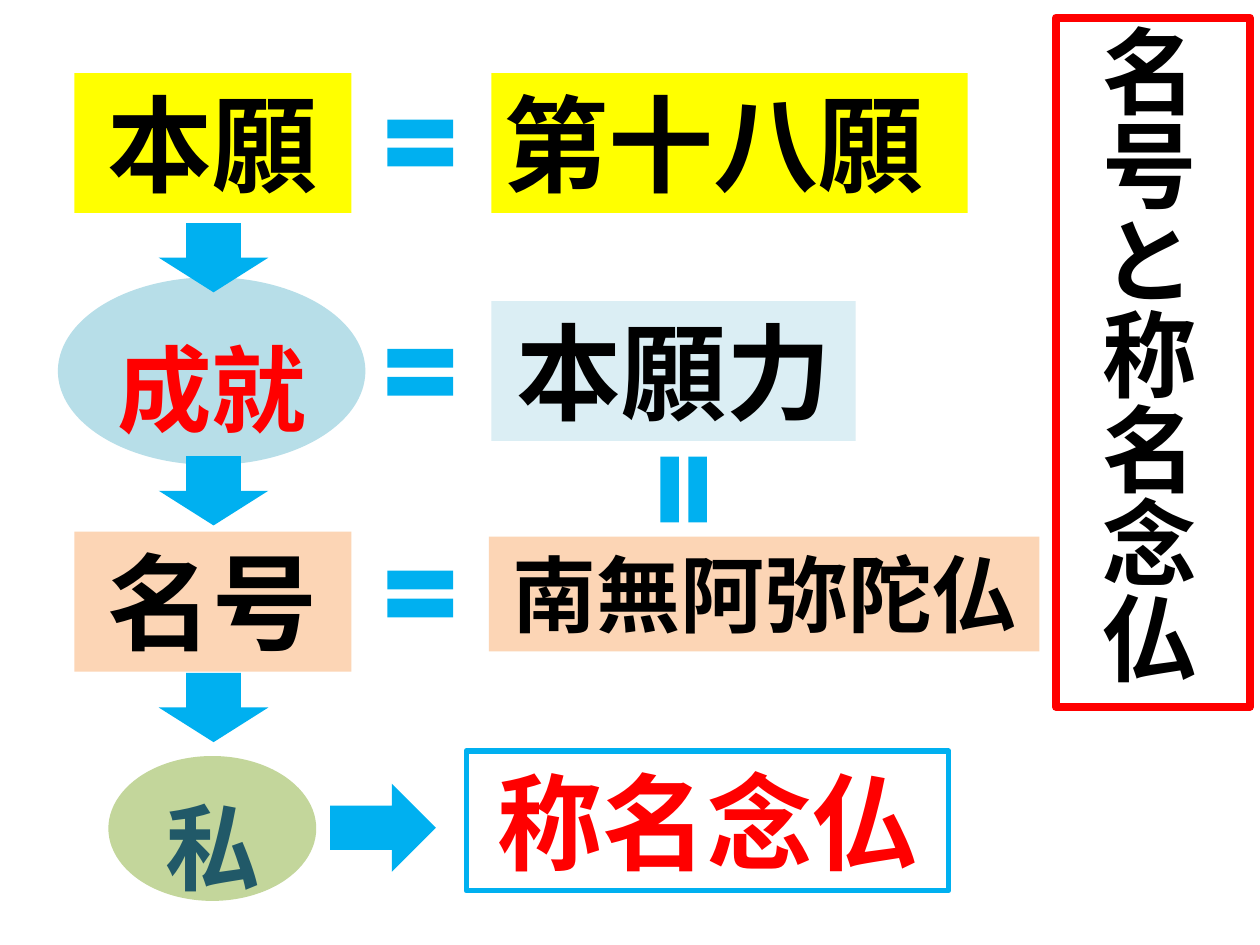
from pptx import Presentation
from pptx.dml.color import RGBColor
from pptx.enum.shapes import MSO_SHAPE
from pptx.enum.text import MSO_ANCHOR, MSO_AUTO_SIZE, PP_ALIGN
from pptx.util import Inches, Pt

RECTANGLE = MSO_SHAPE.RECTANGLE
OVAL = MSO_SHAPE.OVAL
ARROW = MSO_SHAPE.RIGHT_ARROW
EQUAL = MSO_SHAPE.MATH_EQUAL
CENTER = PP_ALIGN.CENTER
LEFT = PP_ALIGN.LEFT
TOP = MSO_ANCHOR.TOP
MIDDLE = MSO_ANCHOR.MIDDLE
NO_AUTOSIZE = MSO_AUTO_SIZE.NONE

FONT = "Noto Sans CJK JP"
BLACK, RED, BLUE = "000000", "FF0000", "00B0F0"
YELLOW, PEACH = "FFFF00", "FCD5B5"
TITLE_ONLY = 5


def color(hex_string):
    """Turn a hex string into a colour."""
    return RGBColor.from_string(hex_string)


def add_figure(slide, kind, box, fill=None, line=None, rotation=0):
    """Add a flat preset shape in the box, with optional fill and outline."""
    shape = slide.shapes.add_shape(kind, *map(Inches, box))
    shape.shadow.inherit = False
    shape.rotation = rotation
    if fill:
        shape.fill.solid()
        shape.fill.fore_color.rgb = color(fill)
    else:
        shape.fill.background()
    if line:
        set_outline(shape, line, 3)
    else:
        shape.line.fill.background()
    return shape


def set_outline(shape, hex_string, width):
    """Outline the shape."""
    shape.line.color.rgb = color(hex_string)
    shape.line.width = Pt(width)


def write(shape, text, size, hex_string=BLACK, font=FONT, align=CENTER, anchor=TOP, spacing=None):
    """Write one bold paragraph in the shape."""
    frame = shape.text_frame
    frame.word_wrap = True
    frame.auto_size = NO_AUTOSIZE
    frame.vertical_anchor = anchor
    paragraph = frame.paragraphs[0]
    paragraph.alignment = align
    if spacing:
        paragraph.line_spacing = spacing
    run = paragraph.add_run()
    run.text = text
    run.font.name = font
    run.font.size = Pt(size)
    run.font.bold = True
    run.font.color.rgb = color(hex_string)


def add_title(slide, box):
    """Set the title vertically in a red frame."""
    title = slide.shapes.title
    title.left, title.top, title.width, title.height = map(Inches, box)
    set_outline(title, RED, 4.5)
    write(title, "名号と称名念仏", 54, spacing=1.3)
    title.text_frame._txBody.bodyPr.set("vert", "eaVert")


def add_ellipse(slide, box, text, fill, hex_string):
    """Add a labelled ellipse."""
    shape = add_figure(slide, OVAL, box, fill)
    write(shape, text, 54, hex_string, anchor=MIDDLE, spacing=1.3)


def add_terms(slide):
    """Add the ellipses and the labelled boxes."""
    add_ellipse(slide, (0.46, 2.2, 2.44, 1.49), "成就", "B7DEE8", RED)
    add_ellipse(slide, (0.86, 6, 1.65, 1.15), "私", "C3D69B", "215968")
    terms = [
        ("本願", (0.59, 0.58, 2.2, 1.11), YELLOW, 60, CENTER),
        ("第十八願", (3.9, 0.58, 3.78, 1.11), YELLOW, 60, LEFT),
        ("本願力", (3.9, 2.39, 2.89, 1.11), "DBEEF4", 60, CENTER),
        ("名号", (0.59, 4.22, 2.2, 1.11), PEACH, 60, CENTER),
        ("南無阿弥陀仏", (3.88, 4.26, 4.37, 0.91), PEACH, 48, CENTER),
    ]
    for text, box, fill, size, align in terms:
        write(add_figure(slide, RECTANGLE, box, fill), text, size, align=align)
    practice = add_figure(slide, RECTANGLE, (3.7, 5.96, 3.83, 1.11), line=BLUE)
    write(practice, "称名念仏", 60, RED, font="Calibri")


def add_signs(slide):
    """Add the arrows and equal signs between the terms."""
    for top in (1.61, 3.46, 5.18):
        add_figure(slide, ARROW, (1.42, top, 0.55, 0.87), BLUE, rotation=90)
    add_figure(slide, ARROW, (2.62, 6.22, 0.84, 0.7), BLUE)
    for top in (0.82, 2.64, 4.4):
        add_figure(slide, EQUAL, (2.98, top, 0.71, 0.63), BLUE)
    add_figure(slide, EQUAL, (5.07, 3.57, 0.71, 0.63), BLUE, rotation=90)


def main():
    """Build the slide and save it."""
    presentation = Presentation()
    presentation.slide_width = Inches(10)
    presentation.slide_height = Inches(7.5)
    slide = presentation.slides.add_slide(presentation.slide_layouts[TITLE_ONLY])
    add_title(slide, (8.38, 0.14, 1.54, 5.47))
    add_terms(slide)
    add_signs(slide)
    presentation.save("out.pptx")


if __name__ == "__main__":
    main()
